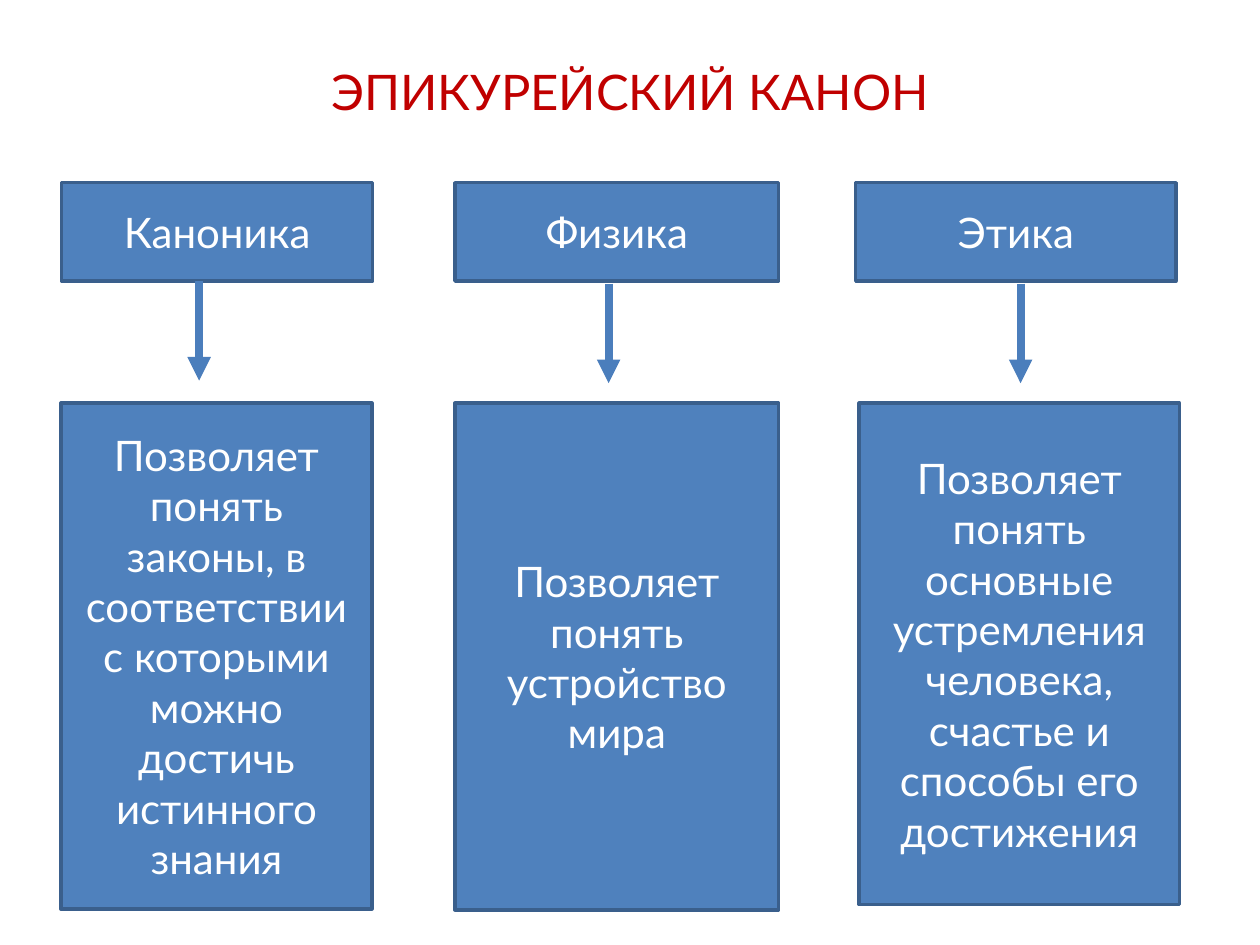
import pptx
import pptx.util
import pptx.dml.color
import pptx.enum.shapes
import pptx.enum.text
import pptx.oxml
import pptx.oxml.ns
from lxml import etree

Pt = pptx.util.Pt

# Content: heading, description, then the column's measures in points
TITLE = "ЭПИКУРЕЙСКИЙ КАНОН"
COLUMNS = [
    dict(head="Каноника",
         body="Позволяет понять законы, в соответствии с которыми можно достичь истинного знания",
         head_x=35.2, body_x=34.8, width=177.8, body_h=289, arrow_x=113.8, arrow_y=160.5),
    dict(head="Физика",
         body="Позволяет понять устройство мира",
         head_x=260, body_x=260, width=185, body_h=289.5, arrow_x=347.8, arrow_y=162),
    dict(head="Этика",
         body="Позволяет понять основные устремления человека, счастье и способы его достижения",
         head_x=489, body_x=491, width=183, body_h=286.5, arrow_x=583.2, arrow_y=162),
]
HEAD_Y, HEAD_H = 104.4, 56.2
BODY_Y = 230.4
ARROW_LENGTH = 57
FILL, BORDER, ARROW, RED, WHITE = "4F81BD", "3A5F8C", "4B7EBC", "C00000", "FFFFFF"


def color(target, value):
    target.rgb = pptx.dml.color.RGBColor.from_string(value)


def write(shape, text, size=24, fill=WHITE, font="Lato"):
    tf = shape.text_frame
    tf.word_wrap = True
    tf.vertical_anchor = pptx.enum.text.MSO_ANCHOR.MIDDLE
    p = tf.paragraphs[0]
    p.alignment = pptx.enum.text.PP_ALIGN.CENTER
    r = p.add_run()
    r.text = text
    r.font.size = Pt(size)
    r.font.name = font
    color(r.font.color, fill)


def add_box(s, text, x, y, w, h):
    sp = s.shapes.add_shape(pptx.enum.shapes.MSO_SHAPE.RECTANGLE,
                            Pt(x), Pt(y), Pt(w), Pt(h))
    sp.shadow.inherit = False
    sp.fill.solid()
    color(sp.fill.fore_color, FILL)
    color(sp.line.color, BORDER)
    sp.line.width = Pt(2)
    write(sp, text)


def add_arrow(s, x, y):
    c = s.shapes.add_connector(pptx.enum.shapes.MSO_CONNECTOR.STRAIGHT,
                               Pt(x), Pt(y), Pt(x), Pt(y + ARROW_LENGTH))
    color(c.line.color, ARROW)
    c.line.width = Pt(4.5)
    qn = pptx.oxml.ns.qn
    etree.SubElement(c.line._get_or_add_ln(), qn("a:tailEnd"), type="triangle")
    etree.SubElement(c._element.spPr, qn("a:effectLst"))


prs = pptx.Presentation()
prs.slide_width, prs.slide_height = Pt(720), Pt(540)
s = prs.slides.add_slide(prs.slide_layouts[5])

# Title
title = s.shapes.title
title.left, title.top, title.width, title.height = Pt(49.7), Pt(0), Pt(620.6), Pt(104.4)
write(title, TITLE, size=28, fill=RED)

# Columns: heading, arrow, description
for col in COLUMNS:
    add_box(s, col["head"], col["head_x"], HEAD_Y, col["width"], HEAD_H)
    add_arrow(s, col["arrow_x"], col["arrow_y"])
    add_box(s, col["body"], col["body_x"], BODY_Y, col["width"], col["body_h"])

prs.save("out.pptx")
